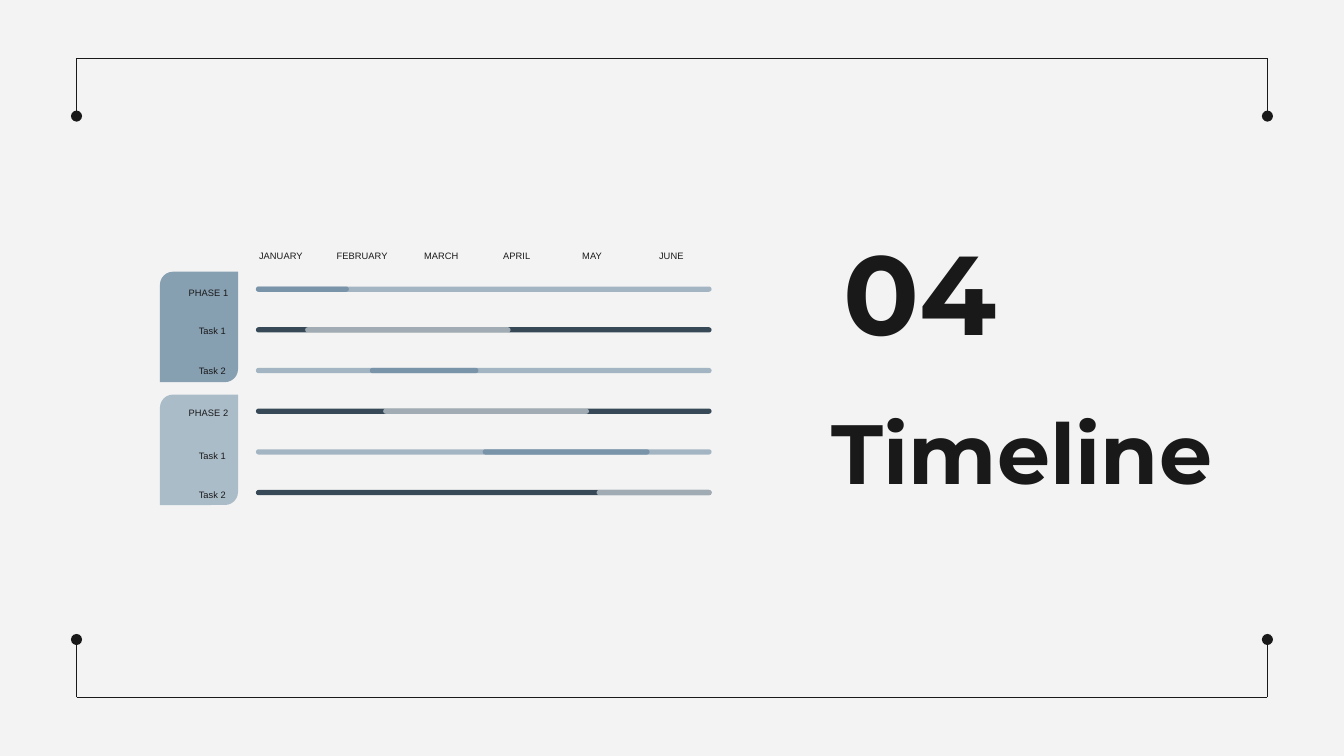
from pptx import Presentation
from pptx import util as u
from pptx.dml import color
from pptx.enum import shapes, text
from pptx.oxml import ns
from lxml import etree

Pt = u.Pt
INK, STEEL, MIST, NAVY = "191919", "7994A9", "D7DFE5", "374957"
MONTHS = [("JANUARY", 129.6, 41.8), ("FEBRUARY", 171.4, 45.2), ("MARCH", 216.6, 39.6),
          ("APRIL", 259.2, 35.3), ("MAY", 299.5, 35.3), ("JUNE", 342, 35.3)]
PHASES = [("869FB1", [("PHASE 1", 8.1), ("Task 1", 27.5), ("Task 2", 49)]),
          ("ABBCC9", [("PHASE 2", 7), ("Task 1", 28.7), ("Task 2", 49.7)])]
SPANS = [(0, 49.8), (26.4, 110), (61, 58.2), (68.2, 110.2), (121.5, 89.4), (182.5, 61.6)]


def rgb(code):
    """Turn a hex string into a colour."""
    return color.RGBColor.from_string(code)


def add_child(parent, tag, **attrs):
    """Append a drawing element to a parent element."""
    return etree.SubElement(parent, ns.qn(tag), attrs)


def add_text(slide, words, x, y, w, h, size, font="Arial", bold=False, inset=0,
             align=text.PP_ALIGN.LEFT, anchor=text.MSO_ANCHOR.TOP, spacing=None):
    """Place one line of text in a box."""
    tf = slide.shapes.add_textbox(Pt(x), Pt(y), Pt(w), Pt(h)).text_frame
    tf.word_wrap = True
    tf.vertical_anchor = anchor
    tf.margin_left = tf.margin_right = tf.margin_top = tf.margin_bottom = Pt(inset)
    p = tf.paragraphs[0]
    p.text, p.alignment, p.line_spacing = words, align, spacing
    p.font.name, p.font.size, p.font.bold = font, Pt(size), bold
    p.font.color.rgb = rgb(INK)


def add_block(slide, kind, x, y, w, h, fill, adjust, alpha=100):
    """Place a filled preset shape without outline or shadow."""
    sp = slide.shapes.add_shape(kind, Pt(x), Pt(y), Pt(w), Pt(h))
    sp.shadow.inherit = False
    sp.adjustments[0] = adjust
    sp.fill.solid()
    sp.fill.fore_color.rgb = rgb(fill)
    sp.line.fill.background()
    if alpha < 100:
        clr = sp.element.spPr.find(ns.qn("a:solidFill"))[0]
        add_child(clr, "a:alpha", val=str(alpha * 1000))


def add_line(slide, x1, y1, x2, y2, dot=False):
    """Draw a thin line, with a round end if wanted."""
    line = slide.shapes.add_connector(shapes.MSO_CONNECTOR.STRAIGHT,
                                      Pt(x1), Pt(y1), Pt(x2), Pt(y2))
    line.line.color.rgb = rgb(INK)
    line.line.width = Pt(0.75)
    if dot:
        add_child(line.line._get_or_add_ln(), "a:tailEnd", type="oval")
    add_child(line.element.spPr, "a:effectLst")


def add_frame(slide, x, y, w, h, stub=31):
    """Draw the top and bottom brackets of the frame."""
    for edge, step in ((y, stub), (y + h, -stub)):
        add_line(slide, x, edge, x + w, edge)
        for side in (x, x + w):
            add_line(slide, side, edge, side, edge + step, dot=True)


def add_heading(slide, x, y, w):
    """Place the section number and title."""
    add_text(slide, "Timeline", x, y + 74.9, w, 163.4, 45, "Montserrat", True, 7.2)
    add_text(slide, "04", x + 6.5, y, w, 66.2, 60, "Montserrat", True, 7.2,
             anchor=text.MSO_ANCHOR.BOTTOM)


def add_phases(slide, x, y, w, h, pitch):
    """Place the phase cards with their row labels."""
    for i, (fill, labels) in enumerate(PHASES):
        top = y + i * pitch
        add_block(slide, shapes.MSO_SHAPE.ROUND_2_DIAG_RECTANGLE, x, top, w, h, fill, 0.167)
        for j, (label, dy) in enumerate(labels):
            inset, spacing = (1.2, 1.15) if j else (0, None)
            add_text(slide, label, x + 5, top + dy, 31.6 - inset, 12, 5,
                     align=text.PP_ALIGN.RIGHT, spacing=spacing)


def add_bars(slide, x, y, w, pitch, h=2.8):
    """Draw each row's track and its active span."""
    for i, (start, length) in enumerate(SPANS):
        styles = ((NAVY, 100), (MIST, 66)) if i % 2 else ((STEEL, 65), (STEEL, 100))
        for (dx, width), (fill, alpha) in zip(((0, w), (start, length)), styles):
            add_block(slide, shapes.MSO_SHAPE.ROUNDED_RECTANGLE, x + dx, y + i * pitch,
                      width, h, fill, 0.5, alpha)


def add_gantt(slide, x, y):
    """Place the month header, phase cards and bars."""
    for month, left, width in MONTHS:
        add_text(slide, month, left, y, width, 10, 5, align=text.PP_ALIGN.CENTER)
    add_phases(slide, x, y + 11.6, 41.8, 59.2, 65.8)
    add_bars(slide, x + 51.4, y + 19.5, 244.1, 21.8)


def main():
    """Build the timeline slide."""
    prs = Presentation()
    prs.slide_width, prs.slide_height = Pt(720), Pt(405)
    slide = prs.slides.add_slide(prs.slide_layouts[6])
    slide.background.fill.solid()
    slide.background.fill.fore_color.rgb = rgb("F3F3F3")
    add_frame(slide, 41, 31.2, 638, 342.4)
    add_heading(slide, 438.5, 132.5, 338.4)
    add_gantt(slide, 85.7, 134)
    prs.save("out.pptx")


if __name__ == "__main__":
    main()
